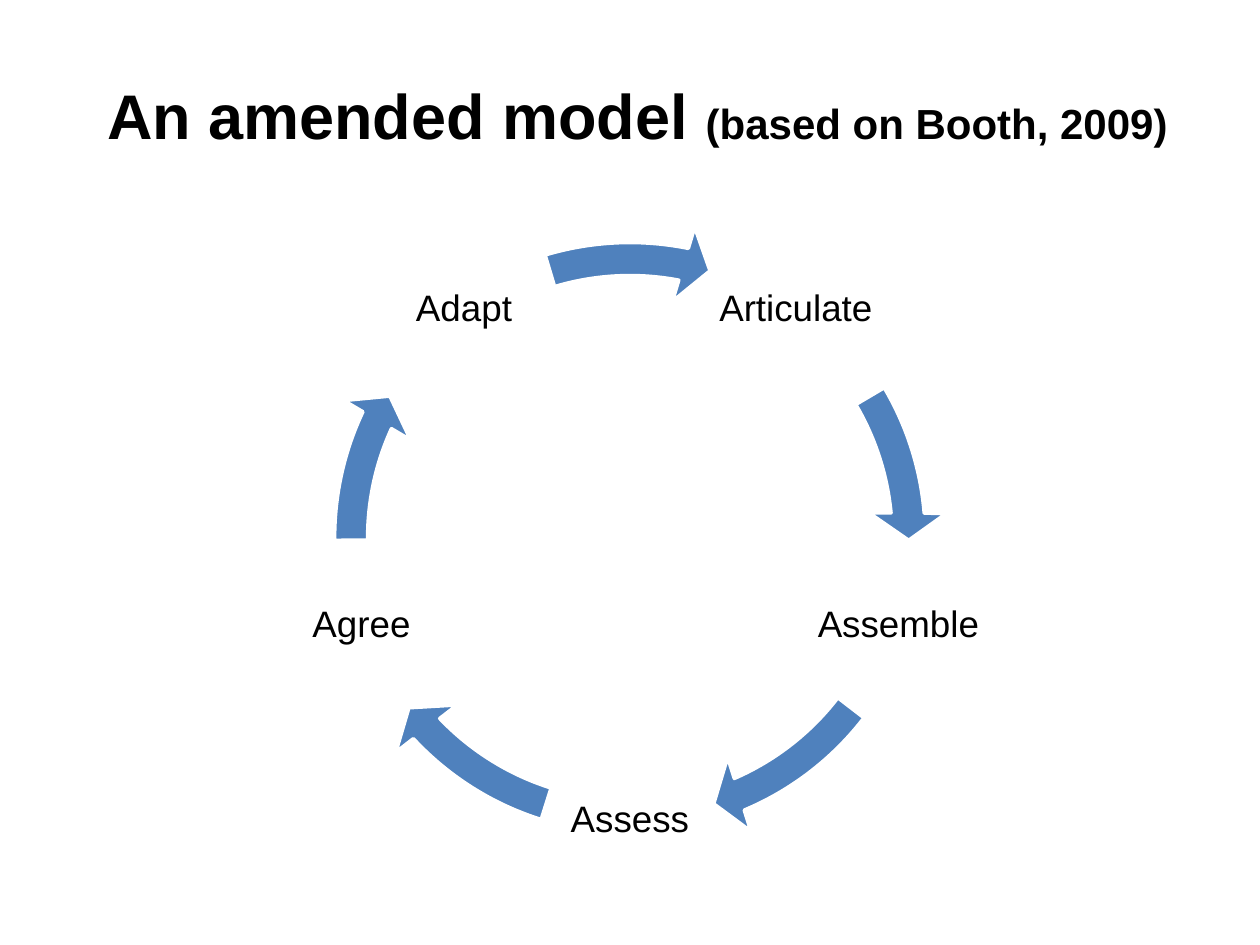
import math

import pptx
import pptx.dml.color
import pptx.enum.shapes
import pptx.enum.text
import pptx.util

Pt = pptx.util.Pt
RGB = pptx.dml.color.RGBColor.from_string
ANCHOR = pptx.enum.text.MSO_ANCHOR
ALIGN = pptx.enum.text.PP_ALIGN

COLORS = {"text": "000000", "arrow": "4F81BD", "outline": "FFFFFF"}


def add_text(paragraph, text, size, bold=False):
    run = paragraph.add_run()
    run.text = text
    for name, value in {"name": "Arial", "size": Pt(size), "bold": bold}.items():
        setattr(run.font, name, value)
    run.font.color.rgb = RGB(COLORS["text"])


def format_frame(frame, anchor, inset):
    sides = ("left", "top", "right", "bottom")
    settings = {f"margin_{side}": Pt(inset) for side in sides}
    settings.update(word_wrap=True, vertical_anchor=anchor,
                    auto_size=pptx.enum.text.MSO_AUTO_SIZE.NONE)
    for name, value in settings.items():
        setattr(frame, name, value)


deck = pptx.Presentation()
deck.slide_width, deck.slide_height = Pt(720), Pt(540)
slide = deck.slides.add_slide(deck.slide_layouts[5])

# Title
title = slide.shapes.title
title.left, title.top, title.width, title.height = Pt(36), Pt(21.6), Pt(648), Pt(72.7)
format_frame(title.text_frame, ANCHOR.BOTTOM, 7.2)
heading = title.text_frame.paragraphs[0]
heading.alignment = ALIGN.LEFT
heading._p.get_or_add_pPr().set("indent", str(Pt(18)))
add_text(heading, "An amended model ", 36, True)
add_text(heading, "(based on Booth, 2009)", 24, True)

# Cycle: steps sit 72 degrees apart, each followed by an arrow to the next
center_x, center_y, radius = 360, 307.4, 161.3
label_size, ring_size = 96.5, 362.9
# step, start and end angle of its arrow in degrees
steps = [
    ("Articulate", 329.44, 354.89),
    ("Assemble", 37.56, 66.91),
    ("Assess", 107.49, 136.84),
    ("Agree", 179.52, 204.96),
    ("Adapt", 253.31, 281.09),
]
ADJUSTMENT_PER_DEGREE = 0.6

for index, (step, start, end) in enumerate(steps):
    angle = math.radians(-54 + index * 360 / len(steps))
    label = slide.shapes.add_textbox(
        Pt(center_x + radius * math.cos(angle) - label_size / 2),
        Pt(center_y + radius * math.sin(angle) - label_size / 2),
        Pt(label_size), Pt(label_size))
    format_frame(label.text_frame, ANCHOR.MIDDLE, 2.1)
    caption = label.text_frame.paragraphs[0]
    caption.alignment = ALIGN.CENTER
    caption.line_spacing = 0.9
    add_text(caption, step, 21)

    arrow = slide.shapes.add_shape(
        pptx.enum.shapes.MSO_SHAPE.CIRCULAR_ARROW,
        Pt(center_x - ring_size / 2), Pt(center_y - ring_size / 2),
        Pt(ring_size), Pt(ring_size))
    head_angle, end_angle, start_angle = (
        degrees * ADJUSTMENT_PER_DEGREE for degrees in (5.6, end, start))
    for slot, value in enumerate((0.052, head_angle, end_angle, start_angle, 0.061)):
        arrow.adjustments[slot] = value
    arrow.shadow.inherit = False
    arrow.fill.solid()
    arrow.fill.fore_color.rgb = RGB(COLORS["arrow"])
    arrow.line.color.rgb = RGB(COLORS["outline"])
    arrow.line.width = Pt(2)

deck.save("out.pptx")
